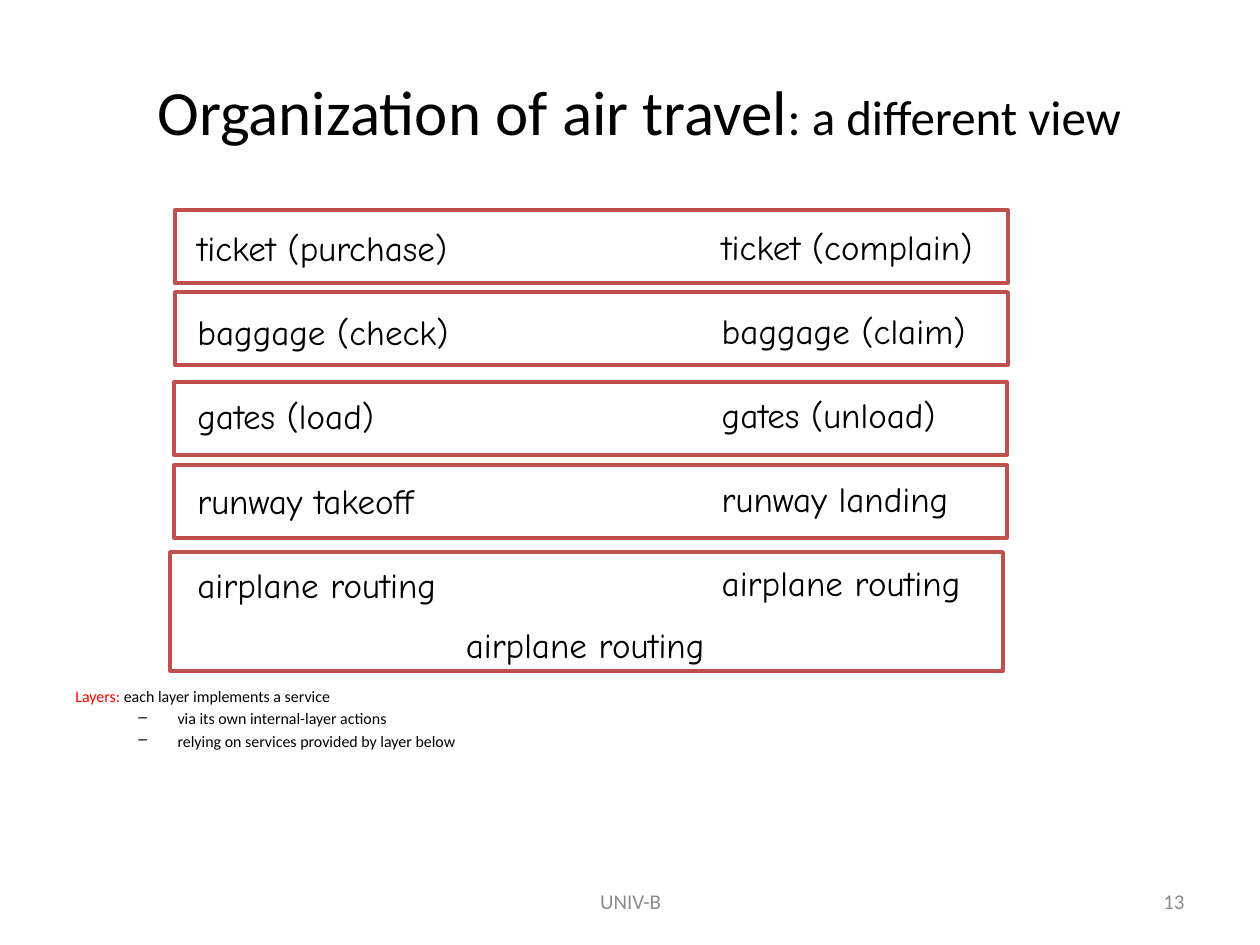
from lxml import etree
from pptx import Presentation
from pptx.dml.color import RGBColor
from pptx.enum.shapes import MSO_SHAPE
from pptx.enum.text import MSO_ANCHOR, PP_ALIGN
from pptx.oxml.ns import qn
from pptx.util import Cm, Pt

BLACK = RGBColor(0x00, 0x00, 0x00)
RED = RGBColor(0xFF, 0x00, 0x00)
GREY = RGBColor(0x8C, 0x8C, 0x8C)
BRICK = RGBColor(0xC0, 0x50, 0x4D)
RECT = MSO_SHAPE.RECTANGLE
TOP, MIDDLE = MSO_ANCHOR.TOP, MSO_ANCHOR.MIDDLE
LEFT, CENTER, RIGHT = PP_ALIGN.LEFT, PP_ALIGN.CENTER, PP_ALIGN.RIGHT
BODY_FONT, LAYER_FONT = "Calibri", "Comic Neue"

DEPARTURE = ["ticket (purchase)", "baggage (check)", "gates (load)",
             "runway takeoff", "airplane routing"]
ARRIVAL = ["ticket (complain)", "baggage (claim)", "gates (unload)",
           "runway landing", "airplane routing"]
# Left, top and height of each layer frame, in cm
FRAMES = [(3.53, 4.24, 1.47), (3.53, 5.89, 1.47), (3.51, 7.7, 1.47),
          (3.51, 9.37, 1.47), (3.43, 11.13, 2.39)]
FRAME_WIDTH = 16.79


def add_text(slide, box, lines, size, font=BODY_FONT, color=BLACK,
             align=LEFT, anchor=TOP, gap=0):
    """Add a text box; each line is a list of run texts, gap is in points."""
    sp = slide.shapes.add_textbox(*(Cm(v) for v in box))
    tf = sp.text_frame
    tf.word_wrap = True
    tf.vertical_anchor = anchor
    for i, runs in enumerate(lines):
        p = tf.add_paragraph() if i else tf.paragraphs[0]
        p.alignment = align
        p.space_before = Pt(gap if i else 0)
        for text in runs:
            r = p.add_run()
            r.text = text
            r.font.size = Pt(size)
            r.font.name = font
            r.font.color.rgb = color
    return tf


def add_dash(p, margin, indent):
    """Give a paragraph a dash bullet with a hanging indent."""
    p.level = 1
    pPr = p._p.get_or_add_pPr()
    pPr.set("marL", str(Cm(margin)))
    pPr.set("indent", str(Cm(indent)))
    etree.SubElement(pPr, qn("a:buChar")).set("char", "–")


def add_frame(slide, left, top, height):
    sp = slide.shapes.add_shape(RECT, Cm(left), Cm(top),
                                Cm(FRAME_WIDTH), Cm(height))
    sp.shadow.inherit = False
    sp.fill.background()
    sp.line.color.rgb = BRICK
    sp.line.width = Pt(2.25)


def add_layer_text(slide, box, names):
    add_text(slide, box, [[name] for name in names], 20, LAYER_FONT, gap=24)


def main():
    prs = Presentation()
    prs.slide_width, prs.slide_height = Cm(25.4), Cm(19.05)
    s = prs.slides.add_slide(prs.slide_layouts[6])

    # Title with a smaller second part
    tf = add_text(s, (1.47, 0.64, 22.83, 3.18),
                  [["Organization of air travel", ": a different view"]],
                  36, align=CENTER, anchor=MIDDLE)
    tf.paragraphs[0].runs[1].font.size = Pt(28)

    # Explanation of layers
    tf = add_text(s, (1.27, 13.72, 22.86, 1.45),
                  [["Layers: ", "each layer implements a service"],
                   ["via its own internal-layer actions"],
                   ["relying on services provided by layer below"]],
                  9.1, gap=1.8)
    tf.paragraphs[0].runs[0].font.color.rgb = RED
    for p in tf.paragraphs[1:]:
        add_dash(p, 2.06, -0.79)

    # Layers: departure, arrival and the routing between them
    add_layer_text(s, (3.73, 4.45, 6.17, 7.87), DEPARTURE)
    add_layer_text(s, (14.3, 4.42, 6.02, 7.87), ARRIVAL)
    add_layer_text(s, (9.14, 12.45, 5.66, 1.09), ["airplane routing"])
    for frame in FRAMES:
        add_frame(s, *frame)

    # Footer and slide number
    add_text(s, (8.69, 17.65, 8.05, 1.02), [["UNIV-B"]], 12,
             color=GREY, align=CENTER, anchor=MIDDLE)
    add_text(s, (18.21, 17.65, 5.92, 1.02), [["13"]], 12,
             color=GREY, align=RIGHT, anchor=MIDDLE)

    prs.save("out.pptx")


if __name__ == "__main__":
    main()
